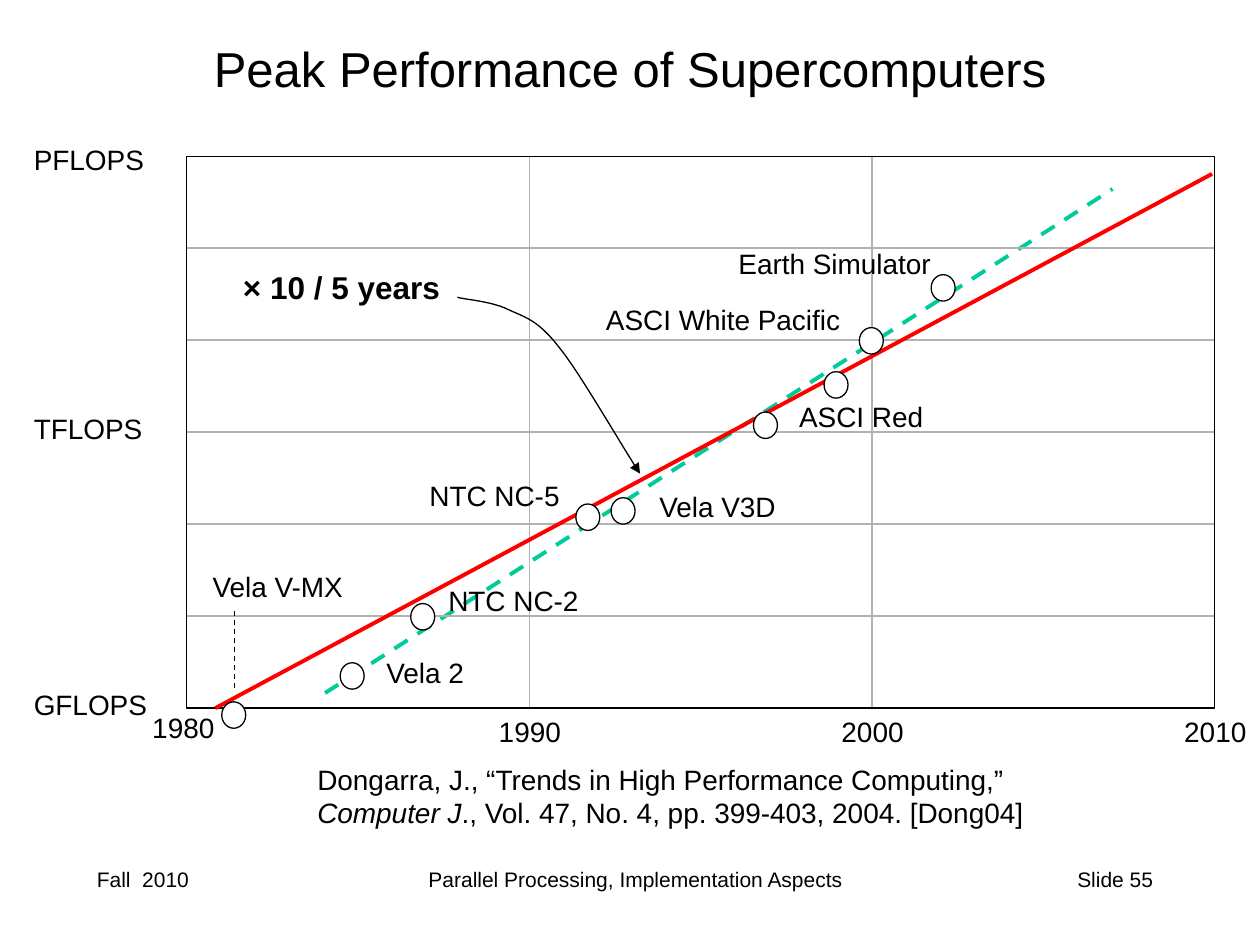
from lxml.etree import SubElement
from pptx import Presentation
from pptx.dml.color import RGBColor
from pptx.enum.dml import MSO_LINE_DASH_STYLE as Dash
from pptx.enum.shapes import MSO_CONNECTOR as Connector, MSO_SHAPE as Shape
from pptx.enum.text import MSO_ANCHOR as Anchor, PP_ALIGN as Align
from pptx.oxml.ns import qn
from pptx.util import Inches, Pt

BLACK = RGBColor(0x00, 0x00, 0x00)
WHITE = RGBColor(0xFF, 0xFF, 0xFF)
GRAY = RGBColor(0xB2, 0xB2, 0xB2)
RED = RGBColor(0xFF, 0x00, 0x00)
TEAL = RGBColor(0x00, 0xCC, 0x99)
FONT = "Arial"

presentation = Presentation()
presentation.slide_width = Inches(10)
presentation.slide_height = Inches(7.5)
slide = presentation.slides.add_slide(presentation.slide_layouts[5])
shapes = slide.shapes


def add_text(text, left, top, width, height=0.37, size=16, align=Align.CENTER,
             bold=False, wrap=False):
    """Add a text box; text is a string or a list of paragraphs of (text, italic) runs."""
    box = shapes.add_textbox(Inches(left), Inches(top), Inches(width), Inches(height))
    frame = box.text_frame
    frame.word_wrap = wrap
    paragraphs = [[(text, False)]] if isinstance(text, str) else text
    for index, runs in enumerate(paragraphs):
        paragraph = frame.add_paragraph() if index else frame.paragraphs[0]
        paragraph.alignment = align
        for run_text, italic in runs:
            run = paragraph.add_run()
            run.text = run_text
            run.font.name, run.font.size = FONT, Pt(size)
            run.font.bold, run.font.italic = bold, italic
            run.font.color.rgb = BLACK


def add_line(start, end, color=BLACK, width=0.75, dash=None):
    line = shapes.add_connector(Connector.STRAIGHT, *(Inches(v) for v in (*start, *end)))
    line.line.color.rgb = color
    line.line.width = Pt(width)
    if dash:
        line.line.dash_style = dash
    SubElement(line._element.spPr, qn("a:effectLst"))


# Title and footer
title = shapes.title
title.left, title.top, title.width, title.height = 0, 0, Inches(10), Inches(1.08)
title.text_frame.text = "Peak Performance of Supercomputers"
title.text_frame.vertical_anchor = Anchor.MIDDLE
title_paragraph = title.text_frame.paragraphs[0]
title_paragraph.alignment = Align.CENTER
title_paragraph.font.name, title_paragraph.font.size = FONT, Pt(28)
title_paragraph.font.color.rgb = BLACK

for text, left, width, align in [
    ("Fall  2010", 0.67, 2.08, Align.LEFT),
    ("Parallel Processing, Implementation Aspects", 2.42, 5.25, Align.CENTER),
    ("Slide 55", 7.17, 2.08, Align.RIGHT),
]:
    add_text(text, left, 6.83, width, 0.5, size=12, align=align, wrap=True)

# Grid: one column per decade, one row per factor of ten
PLOT_LEFT, PLOT_TOP = 1.48, 1.24
COLUMNS, ROWS = 3, 6
CELL_WIDTH, CELL_HEIGHT = 2.72, 0.73
add_line((2.58, 5.5), (8.83, 1.5), TEAL, 2.25, Dash.DASH)
cells = [(PLOT_LEFT + column * CELL_WIDTH, PLOT_TOP + row * CELL_HEIGHT,
          CELL_WIDTH, CELL_HEIGHT, GRAY)
         for column in range(COLUMNS) for row in range(ROWS)]
border = (PLOT_LEFT, PLOT_TOP, COLUMNS * CELL_WIDTH, ROWS * CELL_HEIGHT, BLACK)
for *place, color in cells + [border]:
    rectangle = shapes.add_shape(Shape.RECTANGLE, *(Inches(v) for v in place))
    rectangle.shadow.inherit = False
    rectangle.fill.background()
    rectangle.line.color.rgb = color
    rectangle.line.width = Pt(0.75)
add_line((1.71, 5.62), (9.62, 1.38), RED, 2.25)

# One marker per machine
for left, top in [(1.76, 5.57), (2.7, 5.26), (3.26, 4.79), (4.57, 4), (4.85, 3.95),
                  (5.98, 3.27), (6.54, 2.95), (6.82, 2.6), (7.39, 2.18)]:
    marker = shapes.add_shape(Shape.OVAL, Inches(left), Inches(top), Inches(0.19), Inches(0.21))
    marker.shadow.inherit = False
    marker.fill.solid()
    marker.fill.fore_color.rgb = WHITE
    marker.line.color.rgb = BLACK
    marker.line.width = Pt(0.75)

# Axis labels
for text, top in [("PFLOPS", 1.08), ("TFLOPS", 3.22), ("GFLOPS", 5.41)]:
    add_text(text, 0.17, top, 1.1, align=Align.LEFT)
add_text("1980", 1.11, 5.59, 0.69)
for decade in range(1, COLUMNS + 1):
    add_text(str(1980 + 10 * decade), PLOT_LEFT + decade * CELL_WIDTH - 0.34, 5.62, 0.69)

# Machine labels
for text, left, top, width in [
    ("Earth Simulator", 5.76, 1.91, 1.73),
    ("ASCI White Pacific", 4.71, 2.35, 2.06),
    ("ASCI Red", 6.24, 3.12, 1.19),
    ("Vela V3D", 5.12, 3.84, 1.15),
    ("NTC NC-5", 3.28, 3.75, 1.29),
    ("NTC NC-2", 3.43, 4.58, 1.29),
    ("Vela V-MX", 1.56, 4.47, 1.29),
    ("Vela 2", 2.81, 5.15, 1.13),
]:
    add_text(text, left, top, width)
add_line((1.86, 4.85), (1.86, 5.47), dash=Dash.DASH)

# Growth rate with a curved arrow to the trend line
add_text("× 10 / 5 years", 1.75, 2.08, 1.92, 0.4, size=18, bold=True, wrap=True)
curve = [(3.63, 2.36), (3.7, 2.38), (3.9, 2.39), (4.04, 2.46), (4.17, 2.52),
         (4.27, 2.54), (4.44, 2.76), (4.61, 2.97), (4.94, 3.55), (5.08, 3.76)]
STEPS = 12
points = [curve[0]]
for first in range(0, len(curve) - 1, 3):
    controls = curve[first:first + 4]
    for step in range(1, STEPS + 1):
        t = step / STEPS
        weights = ((1 - t) ** 3, 3 * t * (1 - t) ** 2, 3 * t ** 2 * (1 - t), t ** 3)
        points.append(tuple(sum(w * c[axis] for w, c in zip(weights, controls))
                            for axis in (0, 1)))
# The builder rounds to whole units, so the points are given in EMU
start, *rest = [(Inches(x), Inches(y)) for x, y in points]
builder = shapes.build_freeform(*start)
builder.add_line_segments(rest, close=False)
arrow = builder.convert_to_shape()
arrow.shadow.inherit = False
arrow.fill.background()
arrow.line.color.rgb = BLACK
arrow.line.width = Pt(0.75)
SubElement(arrow.line._get_or_add_ln(), qn("a:tailEnd"), type="triangle")

add_text([[("Dongarra, J., “Trends in High Performance Computing,”", False)],
          [("Computer J", True), ("., Vol. 47, No. 4, pp. 399-403, 2004. [Dong04]", False)]],
         2.42, 6, 5.84, 0.64, align=Align.LEFT)

presentation.save("out.pptx")
